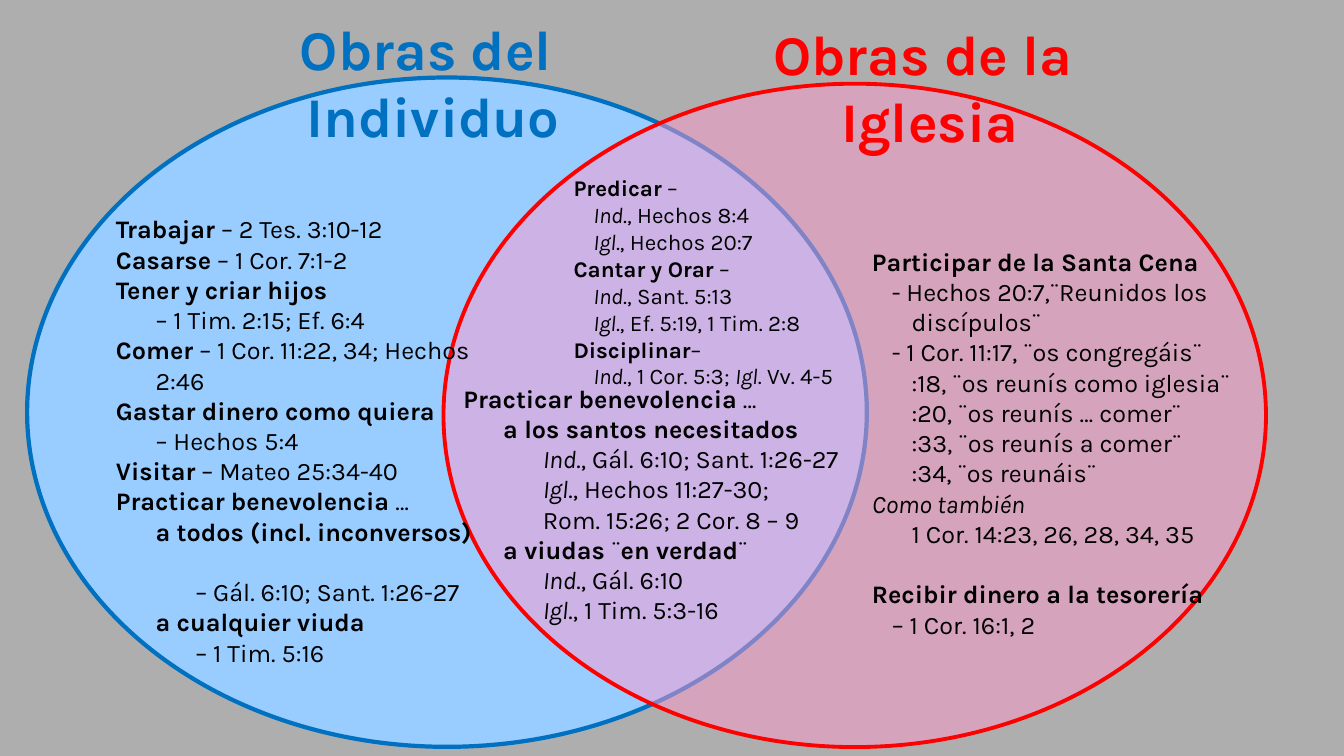
from copy import deepcopy
from dataclasses import dataclass

from lxml.etree import SubElement
from pptx import Presentation
from pptx.dml.color import RGBColor as RGB
from pptx.enum.shapes import MSO_SHAPE as Preset
from pptx.enum.text import MSO_ANCHOR as Anchor
from pptx.enum.text import MSO_AUTO_SIZE as AutoSize
from pptx.enum.text import PP_ALIGN as Align
from pptx.oxml.ns import qn
from pptx.util import Pt


@dataclass(frozen=True)
class Theme:
    font: str = "Karla"
    background: RGB = RGB(0xAE, 0xAE, 0xAE)
    text: RGB = RGB(0, 0, 0)
    blue: RGB = RGB(0x00, 0x70, 0xC0)
    light_blue: RGB = RGB(0x99, 0xCC, 0xFF)
    red: RGB = RGB(0xFF, 0, 0)
    pink: RGB = RGB(0xFF, 0x99, 0xCC)
    heading_size: int = 40
    list_size: int = 18
    small_size: int = 16


THEME = Theme()
STEP = 28.35  # one indent level
HALF = STEP / 2
LINE = 21.6  # height of one list line

# Paragraphs: left margin, first-line indent, text, optional space before.
# In the text, *…* is bold and _…_ is italic.
INDIVIDUAL_HEADING = [(0, 0, "*Obras del *"), (0, 0, "*Individuo*")]
CHURCH_HEADING = [(0, 0, "*Obras de la *"), (0, 0, "*Iglesia*")]

INDIVIDUAL_WORKS = [
    (STEP, -STEP, "*Trabajar* – 2 Tes. 3:10-12"),
    (STEP, -STEP, "*Casarse* – 1 Cor. 7:1-2"),
    (STEP, -STEP, "*Tener y criar hijos \n*– 1 Tim. 2:15; Ef. 6:4"),
    (STEP, -STEP, "*Comer* – 1 Cor. 11:22, 34; Hechos 2:46"),
    (STEP, -STEP, "*Gastar dinero como quiera \n*– Hechos 5:4"),
    (STEP, -STEP, "*Visitar* – Mateo 25:34-40"),
    (STEP, -STEP, "*Practicar benevolencia* …"),
    (2 * STEP, -STEP, "*a todos (incl. inconversos) \n*– Gál. 6:10; Sant. 1:26-27"),
    (2 * STEP, -STEP, "*a cualquier viuda \n*– 1 Tim. 5:16"),
]
CHURCH_WORKS = [
    (HALF, -HALF, "*Participar de la Santa Cena*"),
    (STEP, -HALF, "- Hechos 20:7,¨Reunidos los discípulos¨"),
    (STEP, -HALF, "- 1 Cor. 11:17, ¨os congregáis¨\n:18, ¨os reunís como iglesia¨\n"
                  ":20, ¨os reunís … comer¨\n:33, ¨os reunís a comer¨\n:34, ¨os reunáis¨"),
    (STEP, -STEP, "_Como también \n_1 Cor. 14:23, 26, 28, 34, 35"),
    (STEP, -STEP, "*Recibir dinero a la tesorería*", LINE),
    (STEP, -HALF, "– 1 Cor. 16:1, 2"),
]
SHARED_WORSHIP = [
    (HALF, -HALF, "*Predicar* –\n_Ind_., Hechos 8:4\n_Igl_., Hechos 20:7"),
    (HALF, -HALF, "*Cantar y Orar* – \n_Ind_., Sant. 5:13\n_Igl_., Ef. 5:19, 1 Tim. 2:8"),
    (HALF, -HALF, "*Disciplinar*– \n_Ind_., 1 Cor. 5:3; _Igl_. Vv. 4-5"),
]
SHARED_BENEVOLENCE = [
    (STEP, -STEP, "*Practicar benevolencia* …"),
    (2 * STEP, -STEP, "*a los santos necesitados \n*_Ind_., Gál. 6:10; Sant. 1:26-27\n"
                      "_Igl_., Hechos 11:27-30; \nRom. 15:26; 2 Cor. 8 – 9"),
    (2 * STEP, -STEP, "*a viudas *¨*en verdad*¨ \n_Ind_., Gál. 6:10\n_Igl_., 1 Tim. 5:3-16"),
]


def add_circle(slide, box, fill, outline, width, opacity=100):
    """Add one set of the diagram behind the text."""
    circle = slide.shapes.add_shape(Preset.OVAL, *map(Pt, box))
    circle.shadow.inherit = False
    circle.fill.solid()
    circle.fill.fore_color.rgb = fill
    circle.line.color.rgb = outline
    circle.line.width = Pt(width)
    if opacity < 100:
        color = circle.element.spPr.find(qn("a:solidFill"))[0]
        SubElement(color, qn("a:alpha"), val=str(opacity * 1000))
    slide.shapes.title.element.addprevious(circle.element)


def write_runs(paragraph, text, size, color):
    """Write marked text as runs and line breaks."""
    for b, bold_part in enumerate(text.split("*")):
        for i, part in enumerate(bold_part.split("_")):
            style = {"name": THEME.font, "size": Pt(size),
                     "bold": b % 2 == 1, "italic": i % 2 == 1}
            for n, line in enumerate(part.split("\n")):
                if n:
                    paragraph.add_line_break()
                    paragraph._p[-1].append(deepcopy(run._r.rPr))
                if line:
                    run = paragraph.add_run()
                    run.text = line
                    for attribute, value in style.items():
                        setattr(run.font, attribute, value)
                    run.font.color.rgb = color


def fill_text(holder, box, paragraphs, size, color=THEME.text, align=Align.LEFT):
    """Place a text shape and write its paragraphs."""
    for side, length in zip(("left", "top", "width", "height"), box):
        setattr(holder, side, Pt(length))
    frame = holder.text_frame
    frame_format = {"word_wrap": True, "vertical_anchor": Anchor.TOP,
                    "auto_size": AutoSize.SHAPE_TO_FIT_TEXT}
    for attribute, value in frame_format.items():
        setattr(frame, attribute, value)
    for number, (left, indent, text, *gap) in enumerate(paragraphs):
        paragraph = frame.add_paragraph() if number else frame.paragraphs[0]
        paragraph_format = {"alignment": align, "line_spacing": 1.0,
                            "space_before": Pt(gap[0] if gap else 0),
                            "space_after": Pt(0)}
        for attribute, value in paragraph_format.items():
            setattr(paragraph, attribute, value)
        properties = paragraph._p.get_or_add_pPr()
        properties.set("marL", str(Pt(left)))
        properties.set("indent", str(Pt(indent)))
        SubElement(properties, qn("a:buNone"))
        write_runs(paragraph, text, size, color)


def main():
    deck = Presentation()
    deck.slide_width, deck.slide_height = Pt(960), Pt(540)
    slide = deck.slides.add_slide(deck.slide_layouts.get_by_name("Comparison"))
    slide.background.fill.solid()
    slide.background.fill.fore_color.rgb = THEME.background
    places = slide.placeholders

    # Overlapping sets
    add_circle(slide, (19.4, 55.4, 599.8, 478.1), THEME.light_blue, THEME.blue, 3)
    add_circle(slide, (316.8, 59.8, 587.5, 473.8), THEME.pink, THEME.red, 2.75, opacity=50)

    # Headings
    fill_text(slide.shapes.title, (200.9, 6.5, 216.7, 104.4), INDIVIDUAL_HEADING,
              THEME.heading_size, THEME.blue, Align.CENTER)
    fill_text(places[3], (544.3, 10.1, 239.8, 104.4), CHURCH_HEADING,
              THEME.heading_size, THEME.red, Align.CENTER)

    # Works of each set
    fill_text(places[2], (75.6, 149, 268.6, 312.5), INDIVIDUAL_WORKS, THEME.list_size)
    fill_text(places[4], (615.6, 172.1, 304.6, 290.9), CHURCH_WORKS, THEME.list_size)

    # Works shared by both
    fill_text(places[1], (402.5, 121, 283.7, 167), SHARED_WORSHIP, THEME.small_size)
    benevolence_box = (324, 270, 304.6, 181.4)
    benevolence = slide.shapes.add_textbox(*map(Pt, benevolence_box))
    fill_text(benevolence, benevolence_box, SHARED_BENEVOLENCE, THEME.list_size)

    deck.save("out.pptx")


if __name__ == "__main__":
    main()
